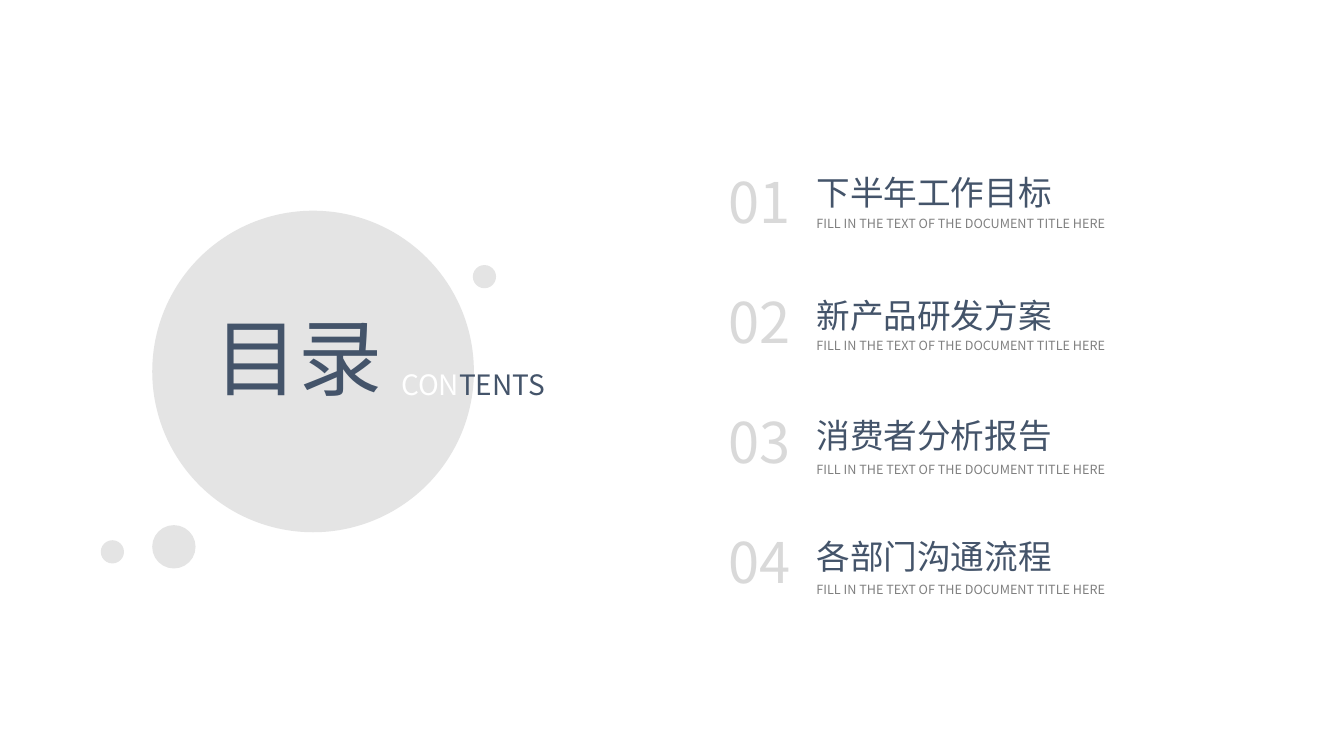
from pptx import Presentation
from pptx.dml.color import RGBColor
from pptx.enum.shapes import MSO_SHAPE as SHAPE
from pptx.enum.text import MSO_AUTO_SIZE as FIT, PP_ALIGN as ALIGN
from pptx.oxml.ns import qn
from pptx.util import Inches, Pt
from lxml import etree

# Content
FONT = "Noto Sans CJK SC"
NAVY, SILVER, GRAY, WHITE = "44546A", "D9D9D9", "808080", "FFFFFF"
CIRCLES = [  # left, top, diameter
    (1.51, 2.09, 3.19),
    (1.51, 5.21, 0.43),
    (1, 5.36, 0.23),
    (4.69, 2.63, 0.23),
]
HEADINGS = [  # box, size, coloured runs
    ((2.03, 2.98, 1.97, 1.11), 60, [("目录", NAVY)]),
    ((3.88, 3.6, 1.97, 0.44), 20, [("CON", WHITE), ("TENTS", NAVY)]),
]
SUBTITLE = "FILL IN THE TEXT OF THE DOCUMENT TITLE HERE"
CHAPTERS = [  # title, title top, subtitle top
    ("下半年工作目标", 1.66, 2.09),
    ("新产品研发方案", 2.88, 3.3),
    ("消费者分析报告", 4.07, 4.53),
    ("各部门沟通流程", 5.27, 5.72),
]
NUMBER_TOP, NUMBER_STEP = 1.61, 1.19
NUMBER_LEFT, TITLE_LEFT = 7.13, 8

prs = Presentation()
prs.slide_width, prs.slide_height = Inches(13.33), Inches(7.5)
s = prs.slides.add_slide(prs.slide_layouts[6])


def rgb(color):
    return RGBColor.from_string(color)


def add_circle(left, top, diameter):
    sp = s.shapes.add_shape(SHAPE.FLOWCHART_CONNECTOR,
                            *map(Inches, (left, top, diameter, diameter)))
    sp.shadow.inherit = False
    sp.line.fill.background()
    sp.fill.solid()
    sp.fill.fore_color.rgb = rgb(SILVER)
    color = next(sp.fill._xPr.iter(qn("a:srgbClr")))
    etree.SubElement(color, qn("a:alpha")).set("val", "70000")


def add_text(box, size, runs, wrap=False, align=None):
    tf = s.shapes.add_textbox(*map(Inches, box)).text_frame
    for name, value in {"word_wrap": wrap, "auto_size": FIT.SHAPE_TO_FIT_TEXT}.items():
        setattr(tf, name, value)
    p = tf.paragraphs[0]
    p.alignment = align
    for text, color in runs:
        r = p.add_run()
        r.text = text
        for name, value in {"size": Pt(size), "name": FONT}.items():
            setattr(r.font, name, value)
        r.font.color.rgb = rgb(color)
        # East Asian typeface
        etree.SubElement(r._r.get_or_add_rPr(), qn("a:ea")).set("typeface", FONT)


# Circles and heading
for circle in CIRCLES:
    add_circle(*circle)
for box, size, runs in HEADINGS:
    add_text(box, size, runs, wrap=True, align=ALIGN.JUSTIFY)

# Chapter list
for i, (title, title_top, subtitle_top) in enumerate(CHAPTERS):
    number_top = NUMBER_TOP + i * NUMBER_STEP
    add_text((NUMBER_LEFT, number_top, 0.86, 0.77), 40, [(f"{i + 1:02}", SILVER)])
    add_text((TITLE_LEFT, title_top, 2.56, 0.5), 24, [(title, NAVY)])
    add_text((TITLE_LEFT, subtitle_top, 3.14, 0.25), 9, [(SUBTITLE, GRAY)])

prs.save("out.pptx")
